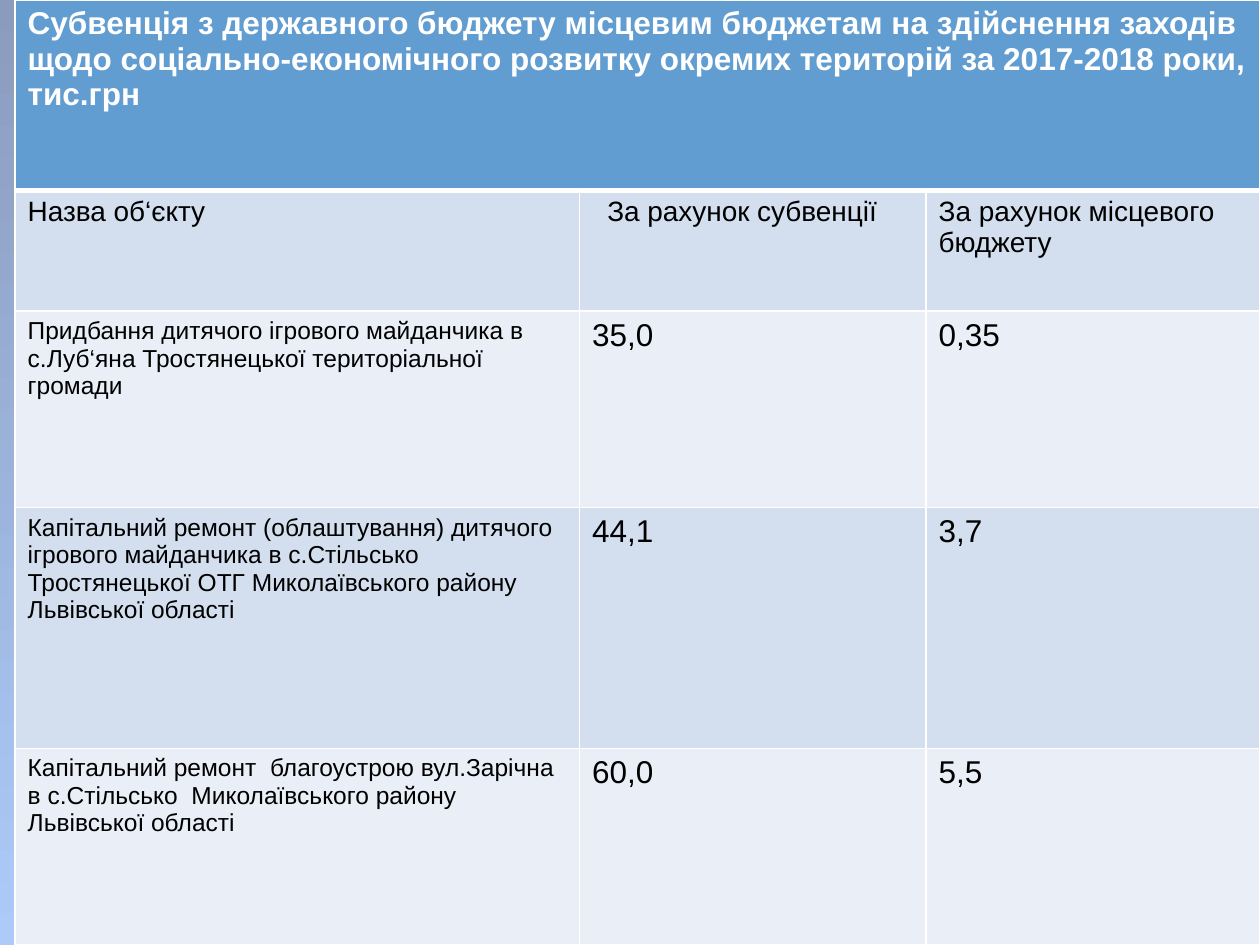
"""Build a slide with a table of regional development grants."""
from lxml import etree
from pptx import Presentation
from pptx import util as u
from pptx.dml.color import RGBColor
from pptx.enum import shapes
from pptx.oxml import ns

WHITE = RGBColor(0xFF, 0xFF, 0xFF)
BLACK = RGBColor(0x00, 0x00, 0x00)
BLUE = RGBColor(0x62, 0x9D, 0xD1)
BANDS = [RGBColor(0xD3, 0xDF, 0xEE), RGBColor(0xEA, 0xEF, 0xF7)]
DUSK = RGBColor(0x8B, 0x9B, 0xBD)
SKY = RGBColor(0xAC, 0xCB, 0xF9)

COLS = [4.48, 2.75, 2.65]
ROWS = [1.51, 0.96, 1.56, 1.91, 1.56]
TITLE = ("Субвенція з державного бюджету місцевим бюджетам на здійснення заходів "
         "щодо соціально-економічного розвитку окремих територій за 2017-2018 роки, тис.грн")
DATA = [
    ("Назва об‘єкту", "За рахунок субвенції", "За рахунок місцевого бюджету"),
    ("Придбання дитячого ігрового майданчика в с.Луб‘яна Тростянецької "
     "територіальної громади", "35,0", "0,35"),
    ("Капітальний ремонт (облаштування) дитячого ігрового майданчика в с.Стільсько "
     "Тростянецької ОТГ Миколаївського району Львівської області", "44,1", "3,7"),
    ("Капітальний ремонт  благоустрою вул.Зарічна в с.Стільсько  Миколаївського "
     "району Львівської області", "60,0", "5,5"),
]


def write(cell, words, size=18, color=BLACK, bold=False):
    run = cell.text_frame.paragraphs[0].add_run()
    run.text = words
    run.font.name = "Arial"
    run.font.size = u.Pt(size)
    run.font.color.rgb = color
    run.font.bold = bold


def edge(cell, fill, base=1):
    cell.fill.solid()
    cell.fill.fore_color.rgb = fill
    props = cell._tc.get_or_add_tcPr()
    for spot, (side, wide) in enumerate(zip("LRTB", (1, 1, 1, base))):
        line = etree.Element(ns.qn(f"a:ln{side}"), w=str(u.Pt(wide)))
        paint = etree.SubElement(line, ns.qn("a:solidFill"))
        etree.SubElement(paint, ns.qn("a:srgbClr"), val=str(WHITE))
        props.insert(spot, line)


deck = Presentation()
deck.slide_width, deck.slide_height = u.Inches(10), u.Inches(7.5)
slide = deck.slides.add_slide(deck.slide_layouts[6])
slide.background.fill.solid()
slide.background.fill.fore_color.rgb = SKY

wash = slide.shapes.add_shape(shapes.MSO_SHAPE.RECTANGLE, 0, 0,
                              deck.slide_width, deck.slide_height)
wash.shadow.inherit = False
wash.line.fill.background()
wash.fill.gradient()
wash.fill.gradient_angle = 270
for stop, color, place in zip(wash.fill.gradient_stops, (DUSK, SKY), (0, 1)):
    stop.color.rgb = color
    stop.position = place

wide = u.Inches(sum(COLS))
table = slide.shapes.add_table(len(ROWS), len(COLS), deck.slide_width - wide, 0,
                               wide, deck.slide_height).table
table.horz_banding = False
for col, size in zip(table.columns, COLS):
    col.width = u.Inches(size)
for row, size in zip(table.rows, ROWS):
    row.height = u.Inches(size)

head = table.cell(0, 0)
head.merge(table.cell(0, len(COLS) - 1))
write(head, TITLE, color=WHITE, bold=True)
for cell in table.rows[0].cells:
    edge(cell, BLUE, base=3)

for r, line in enumerate(DATA):
    for c, words in enumerate(line):
        cell = table.cell(r + 1, c)
        write(cell, words, size=16 if r == 0 else 14 if c == 0 else 18)
        edge(cell, BANDS[r % 2])
for cell in list(table.rows[1].cells):
    edge_top = cell._tc.get_or_add_tcPr().find(ns.qn("a:lnT"))
    edge_top.set("w", str(u.Pt(3)))
table.cell(1, 1).margin_left = u.Inches(0.22)

deck.save("out.pptx")
